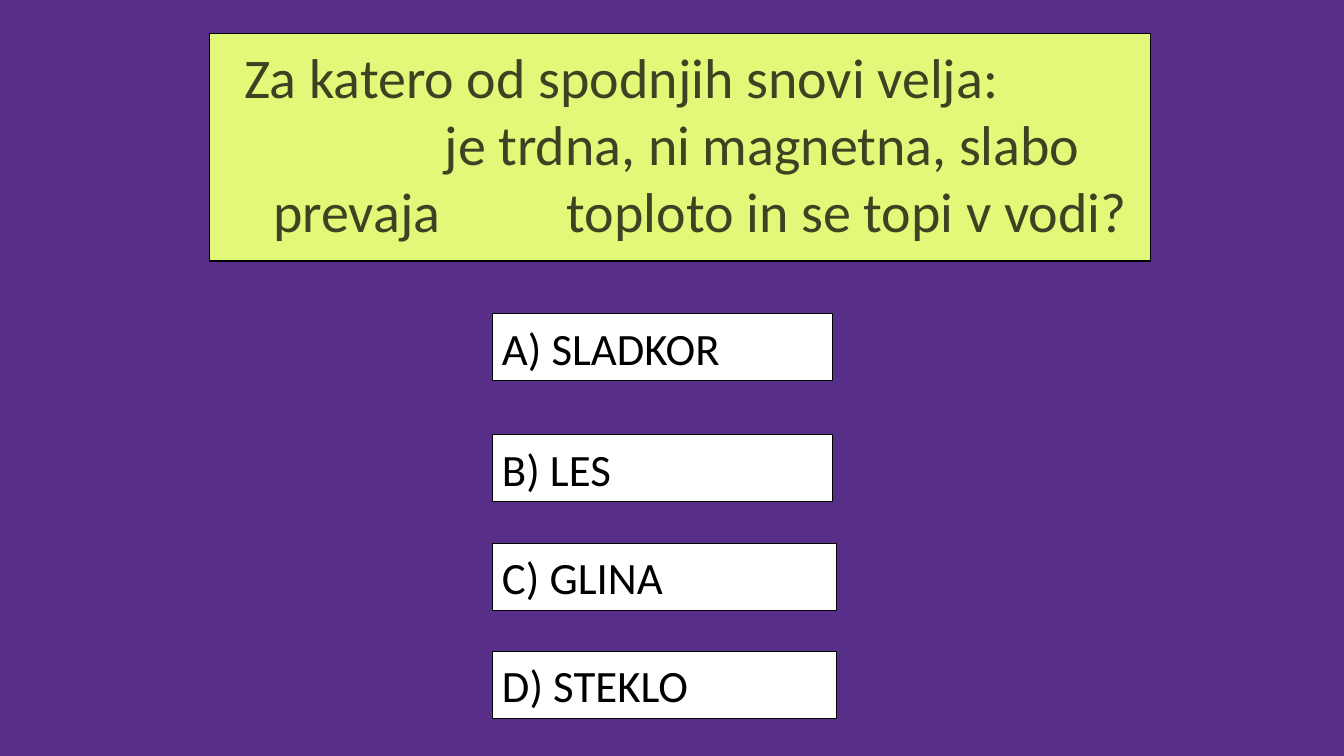
import pptx
import pptx.util
import pptx.dml.color
import pptx.enum.shapes
import pptx.enum.text
from lxml import etree

Inches = pptx.util.Inches
Pt = pptx.util.Pt

QUESTION_BOX = (2.08, 0.33, 9.33, 2.26)
QUESTION = [
    ("Za katero od spodnjih snovi velja:", [0.24]),
    ("je trdna, ni magnetna, slabo", [2.23]),
    ("prevaja\ttoploto in se topi v vodi?", [0.53, 3.44]),
]
ANSWERS = [
    ("A) SLADKOR", 3.11, 3.38),
    ("B) LES", 4.31, 3.38),
    ("C) GLINA", 5.39, 3.42),
    ("D) STEKLO", 6.46, 3.42),
]
ANSWER_LEFT, ANSWER_HEIGHT = 4.88, 0.67


def rgb(value):
    return pptx.dml.color.RGBColor.from_string(value)


def paint(sp, fill):
    sp.fill.solid()
    sp.fill.fore_color.rgb = rgb(fill)
    sp.line.color.rgb = rgb("000000")
    sp.line.width = Pt(0.75)
    sp.shadow.inherit = False


def add_text(p, text, size, color):
    p.alignment = pptx.enum.text.PP_ALIGN.LEFT
    r = p.add_run()
    r.text = text
    r.font.name = "Calibri"
    r.font.size = Pt(size)
    r.font.color.rgb = rgb(color)


def add_tabs(p, stops):
    pPr = p._p.get_or_add_pPr()
    tabs = etree.SubElement(pPr, pptx.oxml.ns.qn("a:tabLst"))
    for stop in stops:
        etree.SubElement(tabs, pptx.oxml.ns.qn("a:tab"), pos=str(Inches(stop)), algn="l")


prs = pptx.Presentation()
prs.slide_width, prs.slide_height = Inches(13.33), Inches(7.5)
s = prs.slides.add_slide(prs.slide_layouts[5])
s.background.fill.solid()
s.background.fill.fore_color.rgb = rgb("572E88")

sp = s.shapes.title
sp.left, sp.top, sp.width, sp.height = map(Inches, QUESTION_BOX)
paint(sp, "E3F878")
tf = sp.text_frame
tf.word_wrap = True
tf.auto_size = pptx.enum.text.MSO_AUTO_SIZE.NONE
tf.vertical_anchor = pptx.enum.text.MSO_ANCHOR.TOP
tf.margin_top = Inches(0.09)
for i, (line, stops) in enumerate(QUESTION):
    p = tf.add_paragraph() if i else tf.paragraphs[0]
    add_tabs(p, stops)
    add_text(p, "\t" + line, 40, "3E4223")

for answer, top, width in ANSWERS:
    sp = s.shapes.add_shape(
        pptx.enum.shapes.MSO_SHAPE.ACTION_BUTTON_CUSTOM,
        Inches(ANSWER_LEFT), Inches(top), Inches(width), Inches(ANSWER_HEIGHT))
    paint(sp, "FFFFFF")
    tf = sp.text_frame
    tf.word_wrap = True
    tf.vertical_anchor = pptx.enum.text.MSO_ANCHOR.MIDDLE
    add_text(tf.paragraphs[0], answer, 32, "000000")

prs.save("out.pptx")
